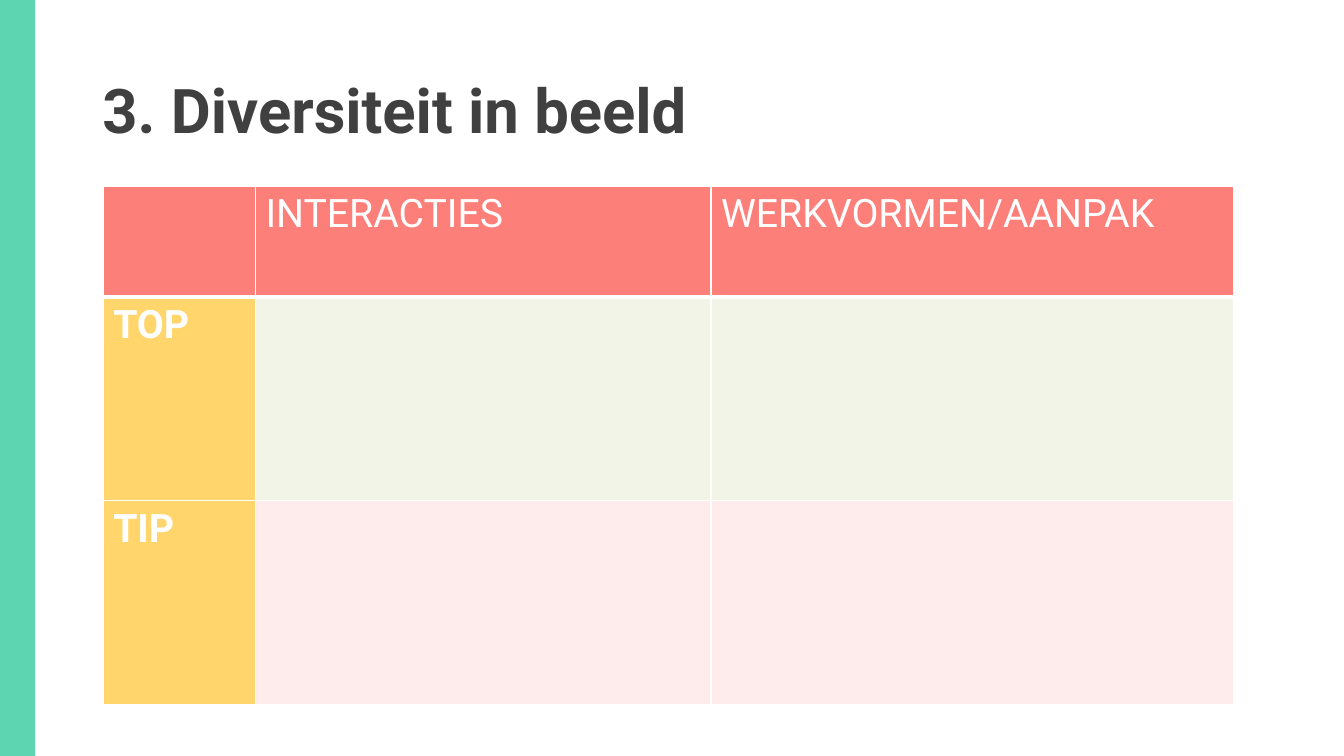
from dataclasses import dataclass

from lxml import etree
from pptx import Presentation
from pptx.dml.color import RGBColor
from pptx.enum.shapes import MSO_SHAPE
from pptx.enum.text import MSO_ANCHOR
from pptx.oxml.ns import qn
from pptx.slide import Slide
from pptx.table import _Cell
from pptx.text.text import _Paragraph
from pptx.util import Cm, Pt

RECT = MSO_SHAPE.RECTANGLE
MIDDLE = MSO_ANCHOR.MIDDLE
FONT = "Roboto"
COLORS = {
    "band": "5CD5B0",
    "title": "404040",
    "white": "FFFFFF",
    "header": "FC7F7A",
    "label": "FFD56C",
    "top": "F2F4E7",
    "tip": "FEECEC",
}
COL_WIDTHS = (3.84, 11.48, 13.16)


@dataclass
class TableRow:
    height: float
    texts: tuple[str, str, str]
    first_fill: str
    other_fill: str
    bold: bool
    bottom_pt: float


ROWS = (
    TableRow(2.79, ("", "INTERACTIES", "WERKVORMEN/AANPAK"), "header", "header", False, 3),
    TableRow(5.13, ("TOP", "", ""), "label", "top", True, 1),
    TableRow(5.13, ("TIP", "", ""), "label", "tip", True, 1),
)


def rgb(name: str) -> RGBColor:
    return RGBColor.from_string(COLORS[name])


def style(p: _Paragraph, size: float, color: str, bold: bool) -> None:
    for r in p.runs:
        r.font.name = FONT
        r.font.size = Pt(size)
        r.font.bold = bold
        r.font.color.rgb = rgb(color)


def set_borders(cell: _Cell, top_pt: float, bottom_pt: float) -> None:
    """Draw white lines on all four sides; they must precede the fill in tcPr."""
    tc_pr = cell._tc.get_or_add_tcPr()
    widths = {"a:lnL": 1, "a:lnR": 1, "a:lnT": top_pt, "a:lnB": bottom_pt}
    for i, (tag, width) in enumerate(widths.items()):
        ln = etree.Element(qn(tag), w=str(Pt(width)))
        fill = etree.SubElement(ln, qn("a:solidFill"))
        etree.SubElement(fill, qn("a:srgbClr"), val=COLORS["white"])
        tc_pr.insert(i, ln)


def add_band(s: Slide, height: int) -> None:
    sp = s.shapes.add_shape(RECT, 0, 0, Cm(0.89), height)
    sp.shadow.inherit = False
    sp.fill.solid()
    sp.fill.fore_color.rgb = rgb("band")
    sp.line.fill.background()


def add_title(s: Slide, text: str) -> None:
    sp = s.shapes.add_textbox(Cm(2.33), Cm(1.01), Cm(29.21), Cm(3.68))
    tf = sp.text_frame
    tf.word_wrap = True
    tf.vertical_anchor = MIDDLE
    tf.text = text
    p = tf.paragraphs[0]
    p.line_spacing = 0.9
    style(p, 44, "title", True)


def add_feedback_table(s: Slide) -> None:
    width, height = sum(COL_WIDTHS), sum(row.height for row in ROWS)
    table = s.shapes.add_table(
        len(ROWS), len(COL_WIDTHS), Cm(2.6), Cm(4.7), Cm(width), Cm(height)
    ).table
    table.first_row = False
    table.horz_banding = False
    for column, col_width in zip(table.columns, COL_WIDTHS):
        column.width = Cm(col_width)
    top_pt = 1
    for i, row in enumerate(ROWS):
        table.rows[i].height = Cm(row.height)
        for j, text in enumerate(row.texts):
            cell = table.cell(i, j)
            cell.text = text
            style(cell.text_frame.paragraphs[0], 28, "white", row.bold)
            cell.fill.solid()
            cell.fill.fore_color.rgb = rgb(row.other_fill if j else row.first_fill)
            set_borders(cell, top_pt, row.bottom_pt)
        top_pt = row.bottom_pt


def main() -> None:
    prs = Presentation()
    prs.slide_width, prs.slide_height = Cm(33.87), Cm(19.05)
    s = prs.slides.add_slide(prs.slide_layouts[6])
    add_band(s, prs.slide_height)
    add_title(s, "3. Diversiteit in beeld")
    add_feedback_table(s)
    prs.save("out.pptx")


if __name__ == "__main__":
    main()
